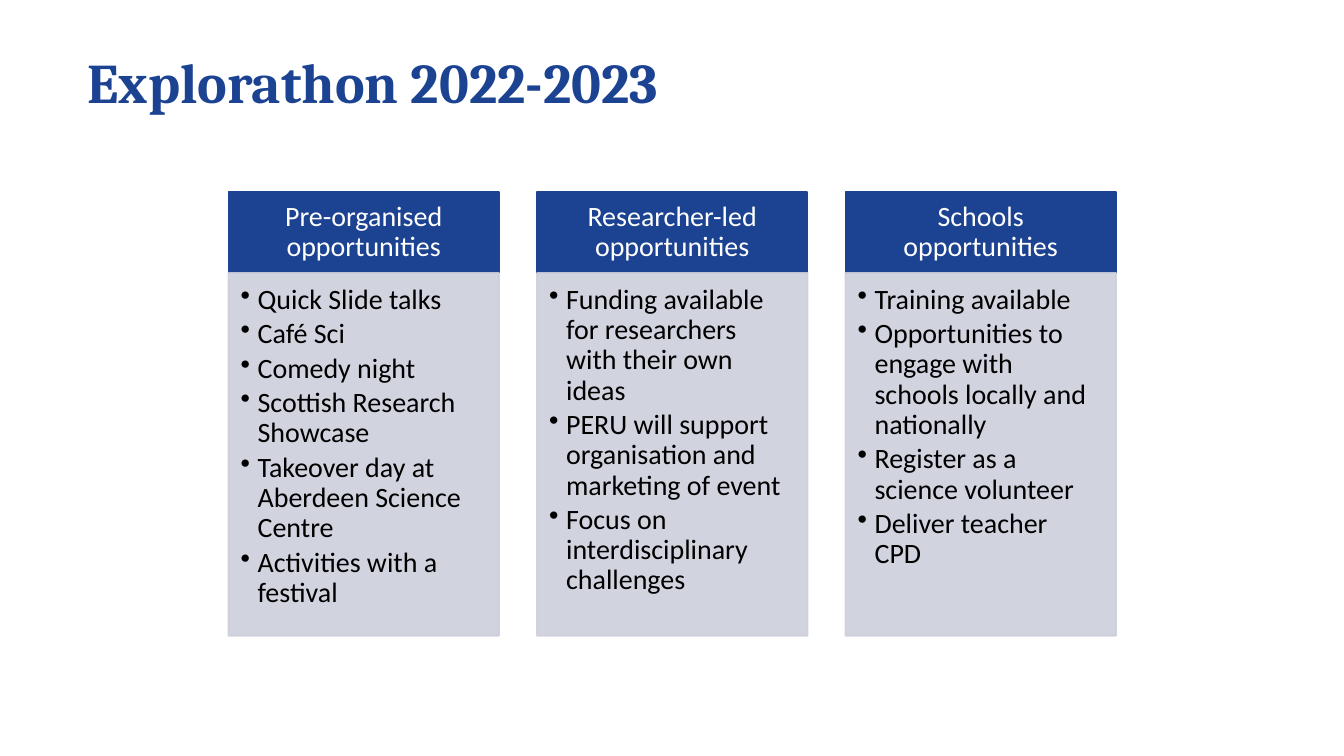
from dataclasses import dataclass

from lxml.etree import SubElement
from pptx import Presentation
from pptx.dml.color import RGBColor
from pptx.enum.shapes import MSO_SHAPE
from pptx.enum.text import MSO_ANCHOR, PP_ALIGN
from pptx.oxml.ns import qn
from pptx.util import Cm, Pt


@dataclass(frozen=True)
class Theme:
    blue: str = "1C4392"
    panel: str = "CDCFDC"
    white: str = "FFFFFF"
    black: str = "000000"
    title_font: str = "Cambria"
    body_font: str = "Calibri"
    title_size: int = 30
    body_size: int = 15


COLUMNS = [
    ("Pre-organised opportunities", [
        "Quick Slide talks",
        "Café Sci",
        "Comedy night",
        "Scottish Research Showcase",
        "Takeover day at Aberdeen Science Centre",
        "Activities with a festival",
    ]),
    ("Researcher-led opportunities", [
        "Funding available for researchers with their own ideas",
        "PERU will support organisation and marketing of event",
        "Focus on interdisciplinary challenges",
    ]),
    ("Schools opportunities", [
        "Training available",
        "Opportunities to engage with schools locally and nationally",
        "Register as a science volunteer",
        "Deliver teacher CPD",
    ]),
]

LEFT, TOP, WIDTH, PITCH = 4.32, 3.63, 5.11, 5.83
HEADER_HEIGHT, PANEL_HEIGHT = 1.53, 6.86


def write(p, text, *, font, size, color, bold=False, align=PP_ALIGN.LEFT,
          space_after=0, bullet=False):
    p.alignment = align
    p.line_spacing = 0.9
    p.space_after = Pt(space_after)
    if bullet:
        p.level = 1
        pPr = p._p.get_or_add_pPr()
        pPr.set("marL", str(Cm(0.32)))
        pPr.set("indent", str(-Cm(0.32)))
        SubElement(pPr, qn("a:buChar"), char="•")
    r = p.add_run()
    r.text = text
    r.font.name = font
    r.font.size = Pt(size)
    r.font.bold = bold
    r.font.color.rgb = RGBColor.from_string(color)


def set_opacity(sp, percent):
    """Apply one opacity to both the fill and the outline of a shape."""
    for color in sp._element.spPr.iter(qn("a:srgbClr")):
        SubElement(color, qn("a:alpha"), val=str(percent * 1000))


class SlideBuilder:
    def __init__(self, prs, theme):
        self.theme = theme
        self.s = prs.slides.add_slide(prs.slide_layouts[5])

    def title(self, text):
        t, sp = self.theme, self.s.shapes.title
        sp.left, sp.top, sp.width, sp.height = Cm(1.4), Cm(0.71), Cm(23.6), Cm(1.8)
        sp.fill.solid()
        sp.fill.fore_color.rgb = RGBColor.from_string(t.white)
        sp.text_frame.vertical_anchor = MSO_ANCHOR.MIDDLE
        write(sp.text_frame.paragraphs[0], text, font=t.title_font,
              size=t.title_size, color=t.blue, bold=True)

    def box(self, x, y, w, h, color, insets, anchor):
        sp = self.s.shapes.add_shape(MSO_SHAPE.RECTANGLE, Cm(x), Cm(y), Cm(w), Cm(h))
        sp.shadow.inherit = False
        sp.fill.solid()
        sp.fill.fore_color.rgb = RGBColor.from_string(color)
        sp.line.color.rgb = RGBColor.from_string(color)
        sp.line.width = Pt(1)
        tf = sp.text_frame
        tf.word_wrap = True
        tf.vertical_anchor = anchor
        tf.margin_left, tf.margin_top, tf.margin_right, tf.margin_bottom = map(Cm, insets)
        return sp

    def header(self, x, text):
        t = self.theme
        sp = self.box(x, TOP, WIDTH, HEADER_HEIGHT, t.blue,
                      (0.3, 0.17, 0.3, 0.17), MSO_ANCHOR.MIDDLE)
        write(sp.text_frame.paragraphs[0], text, font=t.body_font,
              size=t.body_size, color=t.white, align=PP_ALIGN.CENTER)

    def panel(self, x, items):
        t = self.theme
        sp = self.box(x, TOP + HEADER_HEIGHT, WIDTH, PANEL_HEIGHT, t.panel,
                      (0.23, 0.23, 0.3, 0.34), MSO_ANCHOR.TOP)
        set_opacity(sp, 90)
        tf = sp.text_frame
        for i, item in enumerate(items):
            p = tf.add_paragraph() if i else tf.paragraphs[0]
            write(p, item, font=t.body_font, size=t.body_size, color=t.black,
                  space_after=0.15 * t.body_size, bullet=True)


def main():
    prs = Presentation()
    prs.slide_width, prs.slide_height = Cm(25.4), Cm(14.29)
    slide = SlideBuilder(prs, Theme())
    slide.title("Explorathon 2022-2023")
    for i, (heading, items) in enumerate(COLUMNS):
        x = LEFT + i * PITCH
        slide.header(x, heading)
        slide.panel(x, items)
    prs.save("out.pptx")


if __name__ == "__main__":
    main()
